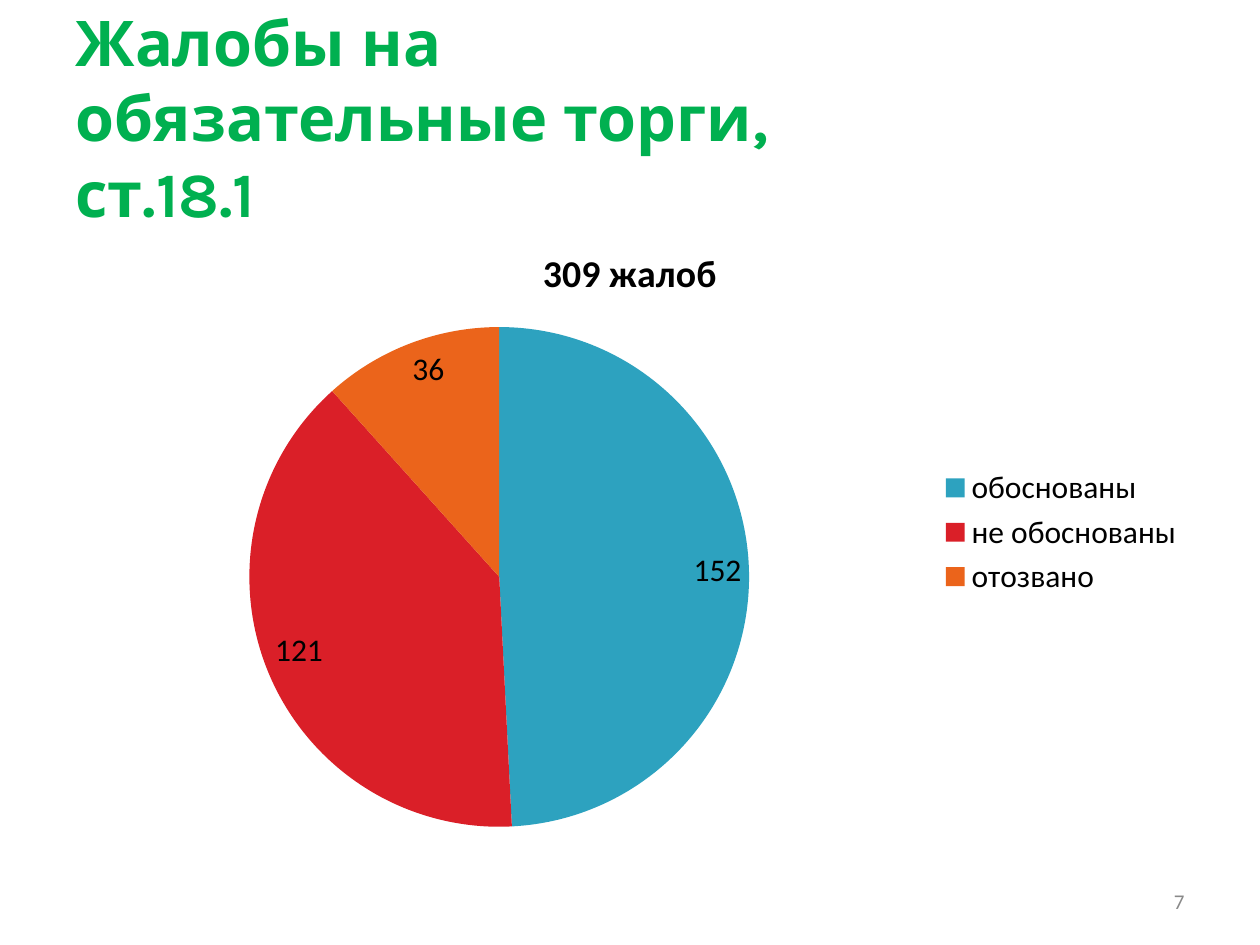
from dataclasses import dataclass

from pptx import Presentation
from pptx.chart.data import CategoryChartData
from pptx.dml.color import RGBColor
from pptx.enum.chart import XL_CHART_TYPE, XL_LABEL_POSITION, XL_LEGEND_POSITION
from pptx.enum.text import MSO_ANCHOR, PP_ALIGN
from pptx.util import Inches, Pt

PIE = XL_CHART_TYPE.PIE
INSIDE_END = XL_LABEL_POSITION.INSIDE_END
LEGEND_RIGHT = XL_LEGEND_POSITION.RIGHT
MIDDLE = MSO_ANCHOR.MIDDLE
LEFT, RIGHT = PP_ALIGN.LEFT, PP_ALIGN.RIGHT
TITLE_ONLY = 5


@dataclass(frozen=True)
class Theme:
    title_font: str = "Karla"
    body_font: str = "Calibri"
    title_color: str = "00B050"
    text_color: str = "000000"
    muted_color: str = "898989"
    title_size: float = 36
    chart_title_size: float = 21.6
    chart_size: float = 18
    number_size: float = 12


THEME = Theme()
# Category: (number of complaints, slice colour)
COMPLAINTS = {
    "обоснованы": (152, "2DA2BF"),
    "не обоснованы": (121, "DA1F28"),
    "отозвано": (36, "EB641B"),
}


def style_font(font, name, size, color, bold=False):
    font.name = name
    font.size = Pt(size)
    font.bold = bold
    font.color.rgb = RGBColor.from_string(color)


def place(shape, left, top, width, height):
    shape.left, shape.top = Inches(left), Inches(top)
    shape.width, shape.height = Inches(width), Inches(height)


def write_line(shape, text, alignment, *font_style):
    frame = shape.text_frame
    frame.word_wrap = True
    frame.vertical_anchor = MIDDLE
    paragraph = frame.paragraphs[0]
    paragraph.alignment = alignment
    run = paragraph.add_run()
    run.text = text
    style_font(run.font, *font_style)


def add_title(slide, text):
    title = slide.shapes.title
    place(title, 0.5, 0.3, 6.96, 1.25)
    write_line(title, text, LEFT, THEME.title_font, THEME.title_size,
               THEME.title_color, True)


def add_page_number(slide, number):
    box = slide.shapes.add_textbox(
        Inches(7.17), Inches(6.95), Inches(2.33), Inches(0.4))
    write_line(box, number, RIGHT, THEME.body_font, THEME.number_size,
               THEME.muted_color)


def add_complaints_chart(slide, heading):
    data = CategoryChartData()
    data.categories = list(COMPLAINTS)
    data.add_series(heading, [count for count, _ in COMPLAINTS.values()])
    chart = slide.shapes.add_chart(
        PIE, Inches(0.5), Inches(1.75), Inches(9), Inches(4.95), data).chart
    style_font(chart.font, THEME.body_font, THEME.chart_size, THEME.text_color)

    chart.has_title = True
    run = chart.chart_title.text_frame.paragraphs[0].add_run()
    run.text = heading
    style_font(run.font, THEME.body_font, THEME.chart_title_size,
               THEME.text_color, True)

    chart.has_legend = True
    chart.legend.position = LEGEND_RIGHT
    chart.legend.include_in_layout = False

    plot = chart.plots[0]
    plot.vary_by_categories = True
    plot.has_data_labels = True
    labels = plot.data_labels
    labels.show_value = True
    labels.show_percentage = False
    labels.position = INSIDE_END
    style_font(labels.font, THEME.body_font, THEME.chart_size, THEME.text_color)

    for index, (_, color) in enumerate(COMPLAINTS.values()):
        fill = plot.series[0].points[index].format.fill
        fill.solid()
        fill.fore_color.rgb = RGBColor.from_string(color)


def main():
    presentation = Presentation()
    presentation.slide_width = Inches(10)
    presentation.slide_height = Inches(7.5)
    slide = presentation.slides.add_slide(presentation.slide_layouts[TITLE_ONLY])
    add_title(slide, "Жалобы на обязательные торги, ст.18.1")
    add_page_number(slide, "7")
    add_complaints_chart(slide, "309 жалоб")
    presentation.save("out.pptx")


if __name__ == "__main__":
    main()
